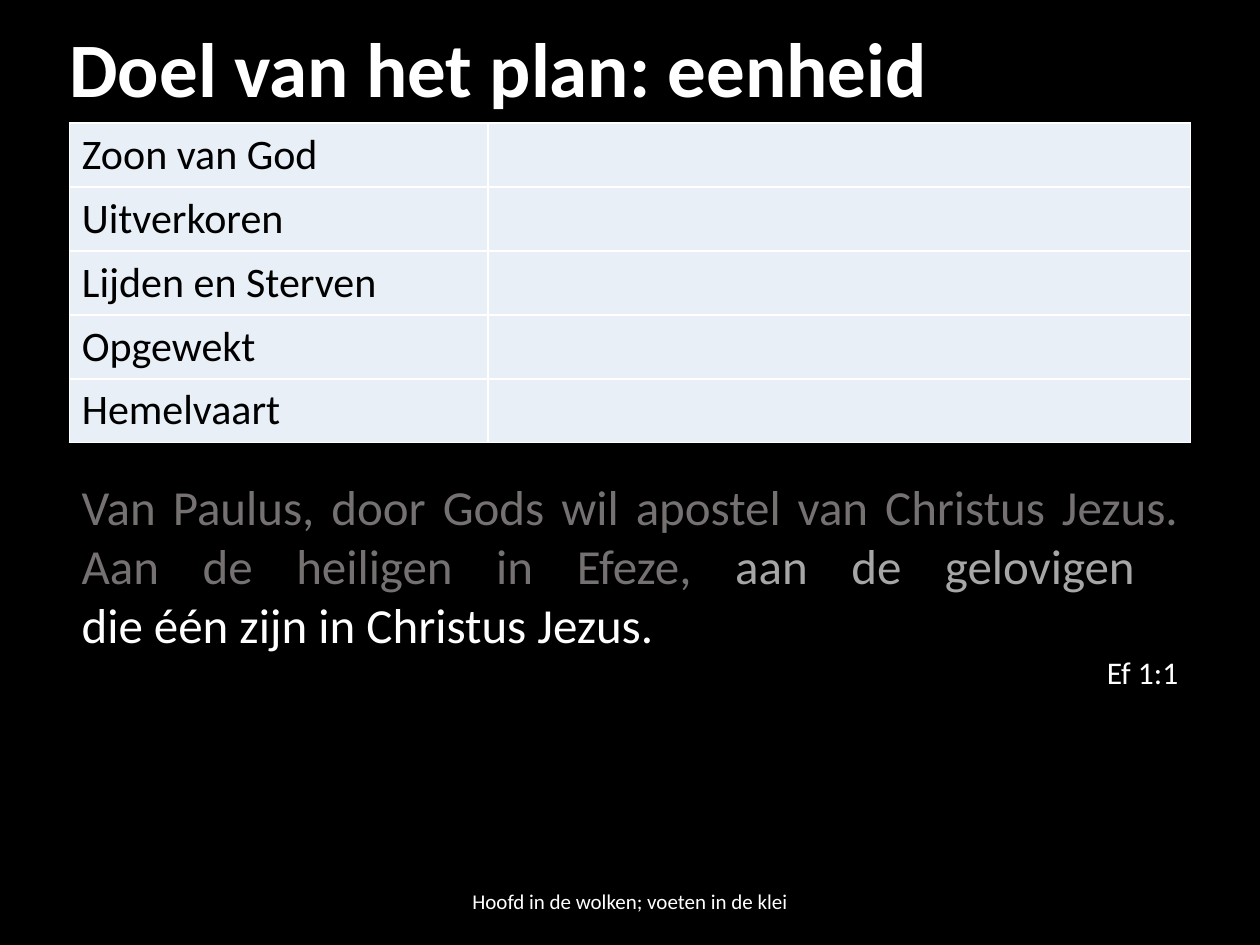
import pptx
import pptx.util
import pptx.dml.color
import pptx.enum.text
import pptx.oxml
import pptx.oxml.ns

Pt = pptx.util.Pt
ALIGN = pptx.enum.text.PP_ALIGN
ANCHOR = pptx.enum.text.MSO_ANCHOR

COLORS = {
    "background": "000000",
    "white": "FFFFFF",
    "dark_text": "000000",
    "cell": "E8EFF6",
    "dim": "767171",
    "soft": "A6A6A6",
}


def rgb(name):
    return pptx.dml.color.RGBColor.from_string(COLORS[name])


class SlideBuilder:
    """Holds the slide style and the slide being built."""

    font_name = "Calibri"

    def __init__(self, slide):
        self.slide = slide
        slide.background.fill.solid()
        slide.background.fill.fore_color.rgb = rgb("background")

    def style(self, paragraph, size, color, align=ALIGN.LEFT, bold=False):
        paragraph.alignment = align
        font = paragraph.font
        font.name, font.size, font.bold = self.font_name, Pt(size), bold
        font.color.rgb = rgb(color)

    def text_box(self, left, top, width, height, anchor=ANCHOR.TOP):
        box = self.slide.shapes.add_textbox(Pt(left), Pt(top), Pt(width), Pt(height))
        frame = box.text_frame
        frame.word_wrap = True
        frame.vertical_anchor = anchor
        return frame

    def line(self, box, text, size, **options):
        """Text box with a single, vertically centred paragraph."""
        paragraph = self.text_box(*box, anchor=ANCHOR.MIDDLE).paragraphs[0]
        paragraph.text = text
        self.style(paragraph, size, "white", **options)
        return paragraph

    def quote(self, box, parts, source):
        """Justified quotation in shades, with its source below at the right."""
        frame = self.text_box(*box)
        frame.auto_size = pptx.enum.text.MSO_AUTO_SIZE.SHAPE_TO_FIT_TEXT
        verse = frame.paragraphs[0]
        self.style(verse, 28, "white", ALIGN.JUSTIFY)
        for text, color, breaks_after in parts:
            run = verse.add_run()
            run.text = text
            run.font.color.rgb = rgb(color)
            if breaks_after:
                verse.add_line_break()
        reference = frame.add_paragraph()
        reference.text = source
        self.style(reference, 18, "white", ALIGN.RIGHT)

    def border(self, cell, color, width):
        properties = cell._tc.get_or_add_tcPr()
        for side in ("lnL", "lnR", "lnT", "lnB"):
            properties.append(pptx.oxml.parse_xml(
                f'<a:{side} {pptx.oxml.ns.nsdecls("a")} w="{Pt(width)}"><a:solidFill>'
                f'<a:srgbClr val="{COLORS[color]}"/></a:solidFill></a:{side}>'))

    def table(self, left, top, column_widths, row_height, rows):
        table = self.slide.shapes.add_table(
            len(rows), len(column_widths), Pt(left), Pt(top),
            Pt(sum(column_widths)), Pt(row_height * len(rows))).table
        table.first_row = table.horz_banding = False
        for column, width in zip(table.columns, column_widths):
            column.width = Pt(width)
        for row, texts in zip(table.rows, rows):
            row.height = Pt(row_height)
            for cell, text in zip(row.cells, texts):
                cell.text = text
                self.style(cell.text_frame.paragraphs[0], 24, "dark_text")
                self.border(cell, "white", 1)
                cell.fill.solid()
                cell.fill.fore_color.rgb = rgb("cell")


def main():
    deck = pptx.Presentation()
    deck.slide_width, deck.slide_height = Pt(720), Pt(540)
    builder = SlideBuilder(deck.slides.add_slide(deck.slide_layouts[6]))

    # Life of Christ, with an open column beside it
    events = ["Zoon van God", "Uitverkoren", "Lijden en Sterven", "Opgewekt", "Hemelvaart"]
    builder.table(39.6, 70.4, [239.4, 401.4], 36.5, [(event, "") for event in events])

    # Footer
    builder.line((238.5, 500.5, 243, 28.8), "Hoofd in de wolken; voeten in de klei",
                 12, align=ALIGN.CENTER)

    # Bible verse
    builder.quote((39.6, 268.8, 640.8, 131), [
        ("Van Paulus, door Gods wil apostel van Christus Jezus. Aan de heiligen in Efeze, ",
         "dim", False),
        ("aan de gelovigen ", "soft", True),
        ("die één zijn in Christus Jezus.", "white", False),
    ], "Ef 1:1")

    # Title
    title = builder.line((32.6, 13.7, 638, 56), "Doel van het plan: eenheid", 44, bold=True)
    title.line_spacing = 0.9

    deck.save("out.pptx")


if __name__ == "__main__":
    main()
